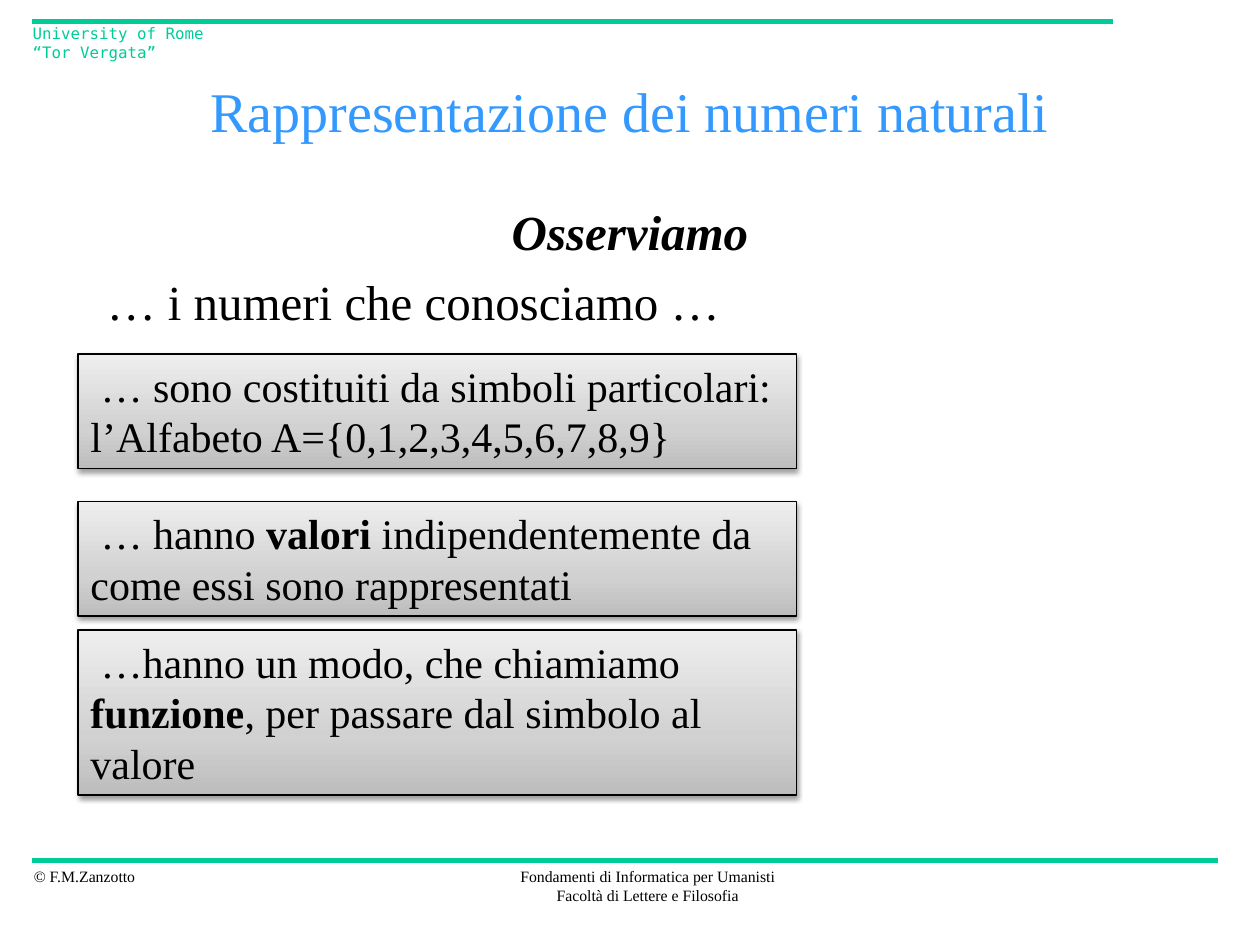
from copy import deepcopy

from lxml import etree
from pptx import Presentation
from pptx.dml.color import RGBColor
from pptx.enum.shapes import MSO_CONNECTOR, MSO_SHAPE
from pptx.enum.text import MSO_ANCHOR, PP_ALIGN
from pptx.oxml.ns import qn
from pptx.util import Inches, Pt

LEFT, CENTER = PP_ALIGN.LEFT, PP_ALIGN.CENTER
MIDDLE, TOP = MSO_ANCHOR.MIDDLE, MSO_ANCHOR.TOP
STRAIGHT, RECTANGLE = MSO_CONNECTOR.STRAIGHT, MSO_SHAPE.RECTANGLE

THEME = {
    "serif": "Times New Roman", "mono": "DejaVu Sans Mono",
    "text": "000000", "title": "3399FF", "accent": "00CC99",
    "gradient": [(0, "BDBDBD"), (0.35, "D1D1D1"), (1, "EEEEEE")],
    "small": 9, "card": 24, "body": 28, "heading": 32,
}

TITLE = "Rappresentazione dei numeri naturali"
INTRO = ["Osserviamo", "… i numeri che conosciamo …"]
RULES = [(0.17, 8.83), (6.83, 9.67)]  # y, right end
RULE_LEFT = 0.25
# box, lines, alignment, font, colour
LABELS = [
    ((0.17, 6.83, 1.02, 0.25), ["© F.M.Zanzotto"], LEFT, "serif", "text"),
    ((4.02, 6.83, 2.24, 0.4),
     ["Fondamenti di Informatica per Umanisti", "Facoltà di Lettere e Filosofia"],
     CENTER, "serif", "text"),
    ((0.16, 0.14, 1.71, 0.4), ["University of Rome\v“Tor Vergata”"],
     LEFT, "mono", "accent"),
]
# top, height, paragraphs of (text, bold) runs
CARDS = [
    (2.81, 0.91, [[("… sono costituiti da simboli particolari:", False)],
                  [("l’Alfabeto A={0,1,2,3,4,5,6,7,8,9}", False)]]),
    (3.98, 0.91, [[("… hanno ", False), ("valori ", True),
                   ("indipendentemente da come essi sono rappresentati", False)]]),
    (5, 1.31, [[("…hanno un modo, che chiamiamo ", False), ("funzione", True),
                (", per passare dal simbolo al valore", False)]]),
]
CARD_LEFT, CARD_WIDTH, CARD_INDENT = 0.62, 5.7, 0.08


def rgb(value):
    return RGBColor.from_string(value)


def style(font, size, face="serif", color="text", bold=False, italic=False):
    font.name, font.size = THEME[face], Pt(THEME[size])
    font.color.rgb = rgb(THEME[color])
    font.bold, font.italic = bold, italic


def indent(p, first, margin=0):
    pPr = p._p.get_or_add_pPr()
    pPr.set("marL", str(Inches(margin)))
    pPr.set("indent", str(Inches(first)))


def add_text(slide, box, lines, wrap):
    tf = slide.shapes.add_textbox(*map(Inches, box)).text_frame
    tf.word_wrap = wrap
    tf.text = "\n".join(lines)
    return tf


def add_rule(slide, y, right):
    line = slide.shapes.add_connector(
        STRAIGHT, Inches(RULE_LEFT), Inches(y), Inches(right), Inches(y))
    line.line.color.rgb = rgb(THEME["accent"])
    line.line.width = Pt(3)
    etree.SubElement(line._element.spPr, qn("a:effectLst"))


def fill_gradient(sp):
    sp.fill.gradient()
    sp.fill.gradient_angle = 90
    stops = sp._element.spPr.find(".//" + qn("a:gsLst"))
    stops.insert(1, deepcopy(stops[0]))
    for stop, (position, color) in zip(sp.fill.gradient_stops, THEME["gradient"]):
        stop.position = position
        stop.color.rgb = rgb(color)


def add_shadow(sp):
    sp.shadow.inherit = False
    effects = sp._element.spPr.find(qn("a:effectLst"))
    shadow = etree.SubElement(
        effects, qn("a:outerShdw"), blurRad=str(Pt(3.1)), dist=str(Pt(1.6)),
        dir="5400000", rotWithShape="0")
    color = etree.SubElement(shadow, qn("a:srgbClr"), val=THEME["text"])
    etree.SubElement(color, qn("a:alpha"), val="38000")


def add_card(slide, top, height, paragraphs):
    sp = slide.shapes.add_shape(
        RECTANGLE, *map(Inches, (CARD_LEFT, top, CARD_WIDTH, height)))
    fill_gradient(sp)
    sp.line.color.rgb = rgb(THEME["text"])
    sp.line.width = Pt(0.75)
    add_shadow(sp)
    tf = sp.text_frame
    tf.word_wrap = True
    tf.vertical_anchor = TOP
    for i, runs in enumerate(paragraphs):
        p = tf.add_paragraph() if i else tf.paragraphs[0]
        p.alignment = LEFT
        indent(p, 0 if i else CARD_INDENT)
        for text, bold in runs:
            r = p.add_run()
            r.text = text
            style(r.font, "card", bold=bold)


def main():
    prs = Presentation()
    prs.slide_width, prs.slide_height = Inches(10), Inches(7.5)
    s = prs.slides.add_slide(prs.slide_layouts[5])

    for y, right in RULES:
        add_rule(s, y, right)
    for box, lines, align, face, color in LABELS:
        for p in add_text(s, box, lines, False).paragraphs:
            p.alignment = align
            for r in p.runs:
                style(r.font, "small", face, color)

    title = s.shapes.title
    title.left, title.top, title.width, title.height = map(Inches, (0.75, 0.5, 8.5, 0.75))
    title.text_frame.text = TITLE
    title.text_frame.vertical_anchor = MIDDLE
    p = title.text_frame.paragraphs[0]
    p.alignment = CENTER
    style(p.runs[0].font, "heading", color="title")

    tf = add_text(s, (0.75, 1.5, 8.5, 1.31), INTRO, True)
    tf.margin_top = Inches(0.1)
    lead, follow = tf.paragraphs
    lead.alignment = CENTER
    follow.space_before = Pt(6.5)
    for p in (lead, follow):
        indent(p, -0.38, 0.38)
        style(p.runs[0].font, "body", bold=p is lead, italic=p is lead)

    for card in CARDS:
        add_card(s, *card)
    prs.save("out.pptx")


if __name__ == "__main__":
    main()
